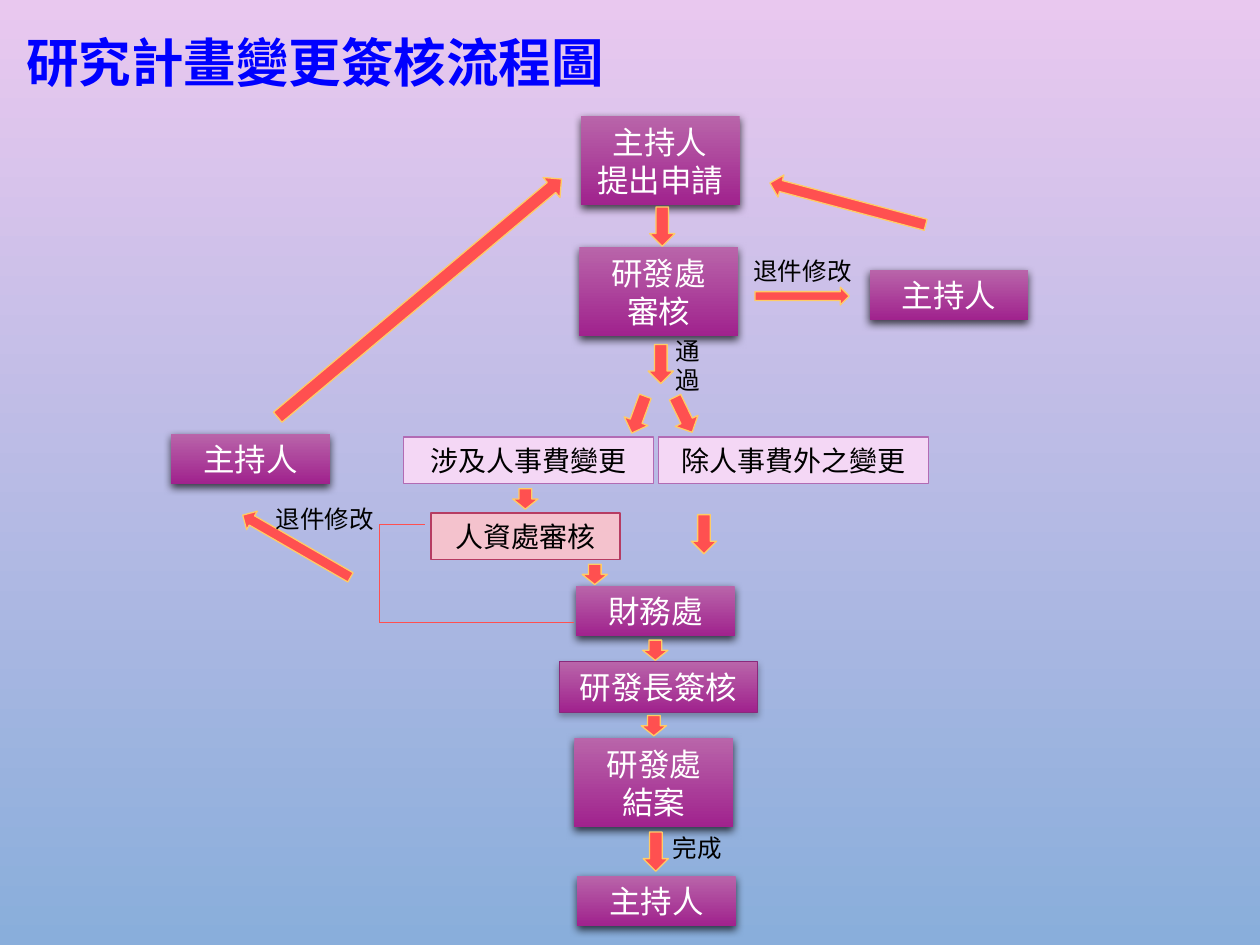
from lxml import etree
from pptx import Presentation
from pptx.dml.color import RGBColor
from pptx.enum import shapes, text
from pptx.oxml.ns import qn
from pptx.util import Cm, Pt


def rgb(code):
    return RGBColor.from_string(code)


def write(shape, words, size, font, color, align):
    frame = shape.text_frame
    frame.text = words
    frame.word_wrap = True
    frame.auto_size = text.MSO_AUTO_SIZE.SHAPE_TO_FIT_TEXT
    for para in frame.paragraphs:
        para.alignment = align
        for run in para.runs:
            run.font.size = Pt(size)
            run.font.name = font
            run.font.color.rgb = rgb(color)


deck = Presentation()
deck.slide_width, deck.slide_height = Cm(25.4), Cm(19.05)
slide = deck.slides.add_slide(deck.slide_layouts[5])
parts = slide.shapes
left, center = text.PP_ALIGN.LEFT, text.PP_ALIGN.CENTER

# Background
back = slide.background.fill
back.gradient()
back.gradient_angle = 270
for stop, color in zip(back.gradient_stops, ("E9C8EF", "89AEDB")):
    stop.color.rgb = rgb(color)

# Title
title = parts.title
title.left, title.top, title.width, title.height = Cm(0.28), Cm(0.36), Cm(16.84), Cm(1.93)
write(title, "研究計畫變更簽核流程圖", 30, "Noto Sans CJK SC", "0000FF", left)
title.text_frame.auto_size = text.MSO_AUTO_SIZE.NONE
title.text_frame.vertical_anchor = text.MSO_ANCHOR.MIDDLE
para = title.text_frame.paragraphs[0]
para.line_spacing = 0.9
font = para.runs[0].font
font.bold = True
latin = para.runs[0]._r.rPr.find(qn("a:latin"))
east = etree.Element(qn("a:ea"), typeface="Noto Sans CJK SC")
latin.addnext(east)

# Purple steps: words, left, top, width, height, edge colour
steps = [
    ("主持人\n提出申請", 11.71, 2.34, 3.2, 1.8, None),
    ("研發處\n審核", 11.68, 4.98, 3.2, 1.8, None),
    ("財務處", 11.61, 11.81, 3.2, 1.02, None),
    ("研發長簽核", 11.28, 13.34, 3.99, 1.02, "8A297B"),
    ("研發處\n結案", 11.58, 14.88, 3.2, 1.8, None),
    ("主持人", 11.63, 17.65, 3.2, 1.02, None),
    ("主持人", 17.53, 5.44, 3.2, 1.02, None),
    ("主持人", 3.45, 8.74, 3.2, 1.02, None),
]
for words, x, y, wide, high, edge in steps:
    box = parts.add_shape(shapes.MSO_SHAPE.RECTANGLE, Cm(x), Cm(y), Cm(wide), Cm(high))
    box.fill.gradient()
    box.fill.gradient_angle = 270
    for stop, color in zip(box.fill.gradient_stops, ("B965AA", "A0228D")):
        stop.color.rgb = rgb(color)
    if edge:
        box.line.color.rgb = rgb(edge)
        box.line.width = Pt(0.75)
    else:
        box.line.fill.background()
    box.shadow.inherit = False
    cast = etree.SubElement(
        box._element.spPr.find(qn("a:effectLst")), qn("a:outerShdw"),
        blurRad=str(Pt(4 if edge else 5)), dist=str(Pt(2)), dir="5400000", rotWithShape="0")
    shade = etree.SubElement(cast, qn("a:srgbClr"), val="000000")
    etree.SubElement(shade, qn("a:alpha"), val="28000" if edge else "69000")
    write(box, words, 18, "Calibri", "FFFFFF", center)

# Pale boxes for the two kinds of change
kinds = [
    ("涉及人事費變更", 8.13, 8.81, 5.05, "F4D7F5", "B26BB4"),
    ("除人事費外之變更", 13.28, 8.81, 5.44, "F4D7F5", "B26BB4"),
    ("人資處審核", 8.69, 10.34, 3.81, "F4C2CD", "B63C62"),
]
for words, x, y, wide, color, edge in kinds:
    box = parts.add_shape(shapes.MSO_SHAPE.RECTANGLE, Cm(x), Cm(y), Cm(wide), Cm(0.94))
    box.shadow.inherit = False
    box.fill.solid()
    box.fill.fore_color.rgb = rgb(color)
    box.line.color.rgb = rgb(edge)
    box.line.width = Pt(0.75)
    write(box, words, 16, "Calibri", "000000", center)

# Block arrows: middle x, middle y, length, thickness, turn
down, short = (0.79, 0.51, 90), (0.41, 0.51, 90)
arrows = [
    (13.35, 4.57, *down), (13.32, 7.34, *down),
    (14.19, 10.77, *down), (13.22, 17.17, *down),
    (10.59, 10.06, *short), (11.99, 11.58, *short),
    (13.21, 13.11, *short), (13.18, 14.63, *short),
    (13.78, 8.36, 0.79, 0.51, 64), (12.87, 8.36, 0.79, 0.51, 110),
    (16.17, 5.97, 1.9, 0.36, 0), (17.09, 4.11, 3.25, 0.46, 195),
    (5.98, 11.01, 2.51, 0.43, 210), (8.46, 6.01, 7.47, 0.53, 320),
]
for x, y, long, thick, turn in arrows:
    arrow = parts.add_shape(shapes.MSO_SHAPE.RIGHT_ARROW, Cm(x - long / 2),
                            Cm(y - thick / 2), Cm(long), Cm(thick))
    arrow.rotation = turn
    arrow.shadow.inherit = False
    arrow.fill.solid()
    arrow.fill.fore_color.rgb = rgb("FF5050")
    arrow.line.color.rgb = rgb("FFCC66")
    arrow.line.width = Pt(0.75)

# Bracket for the return path
for x1, y1, x2, y2 in [(7.65, 10.58, 7.65, 12.55),
                       (7.65, 10.58, 8.56, 10.58),
                       (7.65, 12.55, 11.58, 12.55)]:
    line = parts.add_connector(shapes.MSO_CONNECTOR.STRAIGHT, Cm(x1), Cm(y1), Cm(x2), Cm(y2))
    line.line.color.rgb = rgb("FF5050")
    line.line.width = Pt(0.75)
    etree.SubElement(line._element.spPr, qn("a:effectLst"))

# Labels beside the arrows
for words, x, y, wide, high in [("通過", 13.36, 6.65, 1.32, 1.45),
                                ("退件修改", 14.94, 5.03, 2.64, 0.86),
                                ("完成", 13.31, 16.66, 1.91, 0.86),
                                ("退件修改", 5.31, 10.03, 2.64, 0.86)]:
    label = parts.add_textbox(Cm(x), Cm(y), Cm(wide), Cm(high))
    write(label, words, 14, "Arial", "000000", left)

deck.save("out.pptx")
